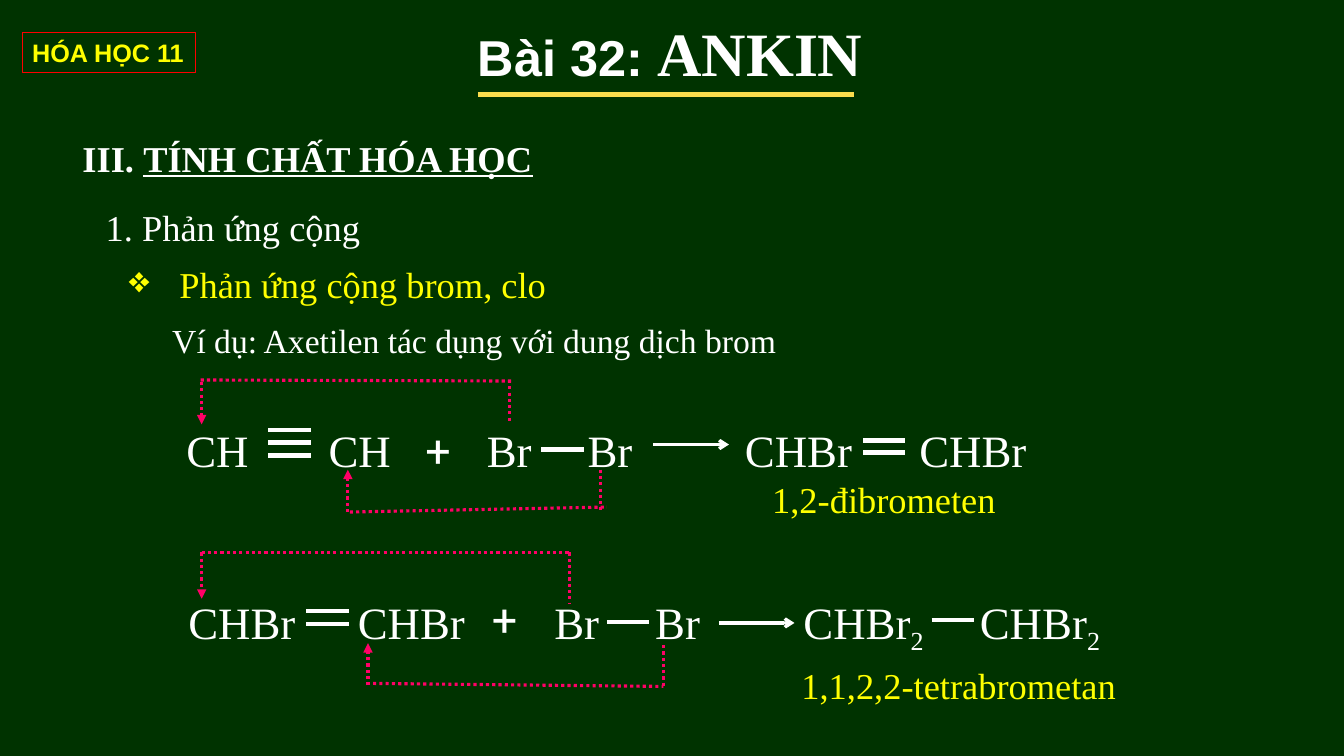
import pptx
import pptx.dml.color
import pptx.enum.dml
import pptx.enum.shapes
import pptx.enum.text
import pptx.oxml.ns
import pptx.util
from lxml import etree

Inches = pptx.util.Inches
qn = pptx.oxml.ns.qn

THEME = {
    "board": "003300", "white": "FFFFFF", "yellow": "FFFF00", "gold": "FADD4D",
    "red": "FF0000", "pink": "FF0066",
    "sans": "Arial", "serif": "Times New Roman", "plus": "Roboto",
    "badge": 18, "lesson": 36, "topic": 44, "heading": 26, "example": 24, "formula": 32,
}


def colour(name):
    return pptx.dml.color.RGBColor.from_string(THEME[name])


def write(box, spans, wrap=False, top_inset=0.05):
    """Fill a box with spans of (text, size, font, colour, extra formats)."""
    frame = box.text_frame
    frame.word_wrap = wrap
    sizes = pptx.enum.text.MSO_AUTO_SIZE
    frame.auto_size = sizes.NONE if wrap else sizes.SHAPE_TO_FIT_TEXT
    frame.vertical_anchor = pptx.enum.text.MSO_ANCHOR.TOP
    frame.margin_top = Inches(top_inset)
    para = frame.paragraphs[0]
    para.alignment = pptx.enum.text.PP_ALIGN.LEFT
    for text, size, font, ink, formats in spans:
        span = para.add_run()
        span.text = text
        span.font.color.rgb = colour(ink)
        values = {"size": pptx.util.Pt(THEME[size]), "name": THEME[font], **formats}
        for name, value in values.items():
            setattr(span.font, name, value)
    return para


def draw_line(start, end, ink, width, dotted=False, arrow=None):
    points = [Inches(value) for value in (*start, *end)]
    line = page.shapes.add_connector(pptx.enum.shapes.MSO_CONNECTOR.STRAIGHT, *points)
    line.line.color.rgb = colour(ink)
    line.line.width = pptx.util.Pt(width)
    if dotted:
        line.line.dash_style = pptx.enum.dml.MSO_LINE.ROUND_DOT
    properties = line._element.spPr
    if arrow:
        etree.SubElement(properties.find(qn("a:ln")), qn("a:tailEnd"), type=arrow)
    etree.SubElement(properties, qn("a:effectLst"))


deck = pptx.Presentation()
deck.slide_width, deck.slide_height = Inches(13.33), Inches(7.5)
page = deck.slides.add_slide(deck.slide_layouts[6])
page.background.fill.solid()
page.background.fill.fore_color.rgb = colour("board")

# Subject badge
badge = page.shapes.add_shape(pptx.enum.shapes.MSO_SHAPE.RECTANGLE,
                              Inches(0.22), Inches(0.32), Inches(1.72), Inches(0.4))
badge.shadow.inherit = False
badge.fill.background()
badge.line.color.rgb = colour("red")
badge.line.width = pptx.util.Pt(0.75)
write(badge, [("HÓA HỌC 11", "badge", "sans", "yellow", {"bold": True})])

# Title, headings and example
bold = {"bold": True}
headings = [
    ((4.64, 0.1, 4.05, 0.84), [("Bài 32: ", "lesson", "sans", "white", bold),
                               ("ANKIN", "topic", "serif", "white", bold)]),
    ((0.72, 1.3, 4.7, 0.54), [("III. ", "heading", "serif", "white", bold),
                              ("TÍNH CHẤT HÓA HỌC", "heading", "serif", "white",
                               {"bold": True, "underline": True})]),
    ((0.95, 1.99, 2.75, 0.54), [("1. Phản ứng cộng", "heading", "serif", "white", {})]),
    ((1.61, 3.12, 6.25, 0.5), [("Ví dụ: Axetilen tác dụng với dung dịch brom",
                                "example", "serif", "white", {})]),
]
for place, spans in headings:
    write(page.shapes.add_textbox(*map(Inches, place)), spans)
draw_line((4.74, 0.94), (8.47, 0.94), "gold", 3.5)

# Bulleted reaction type
reaction = page.shapes.add_textbox(Inches(1.18), Inches(2.55), Inches(4.52), Inches(0.54))
para = write(reaction, [("Phản ứng cộng brom, clo", "heading", "serif", "yellow", {})])
layout = para._p.get_or_add_pPr()
layout.set("marL", str(Inches(0.5)))
layout.set("indent", str(-Inches(0.5)))
etree.SubElement(layout, qn("a:buChar"), char="❖")

# Formulas: left, top, width, pieces, tab stop; a piece "2" is a subscript
formulas = [
    (1.75, 4.1, 0.92, ["CH"], None),
    (3.16, 4.1, 0.92, ["CH"], None),
    (4.12, 4.1, 0.5, ["+"], None),
    (4.73, 4.1, 1.69, ["Br\tBr"], 1.0),
    (7.29, 4.1, 3.33, ["CHBr\tCHBr"], 1.73),
    (1.77, 5.81, 1.5, ["CHBr"], None),
    (3.45, 5.81, 1.58, ["CHBr"], None),
    (4.78, 5.78, 0.5, ["+"], None),
    (5.4, 5.81, 1.76, ["Br\tBr"], 1.0),
    (7.87, 5.81, 3.58, ["CHBr", "2", "\tCHBr", "2"], 1.75),
]
for left, top, width, pieces, stop in formulas:
    box = page.shapes.add_textbox(Inches(left), Inches(top), Inches(width), Inches(0.67))
    spans = [(piece, "formula", "plus" if piece == "+" else "serif", "white", {})
             for piece in pieces]
    para = write(box, spans, wrap=True, top_inset=0.09)
    for span in para.runs:
        if span.text == "2":
            span._r.get_or_add_rPr().set("baseline", "-25000")
    if stop:
        tabs = etree.SubElement(para._p.get_or_add_pPr(), qn("a:tabLst"))
        etree.SubElement(tabs, qn("a:tab"), pos=str(Inches(stop)), algn="l")

# Product names
for left, top, width, product in [(7.56, 4.64, 2.42, "1,2-đibrometen"),
                                  (7.85, 6.49, 3.43, "1,1,2,2-tetrabrometan")]:
    box = page.shapes.add_textbox(Inches(left), Inches(top), Inches(width), Inches(0.58))
    write(box, [(product, "heading", "serif", "yellow", {})], wrap=True, top_inset=0.09)

# Chemical bonds: left end and the height of each stroke
bonds = [
    (2.66, [4.27, 4.39, 4.52]), (5.37, [4.46]), (8.56, [4.37, 4.49]),
    (3.04, [6.06, 6.19]), (6.02, [6.17]), (9.24, [6.15]),
]
for left, heights in bonds:
    for height in heights:
        draw_line((left, height), (left + 0.42, height), "white", 3)

# Reaction arrows
for left, height in [(6.48, 4.41), (7.13, 6.18)]:
    draw_line((left, height), (left + 0.75, height), "white", 2.25, arrow="arrow")

# Dotted paths of the bromine atoms: stem, crossing, arrow
atom_paths = [
    [((5.05, 3.77), (5.05, 4.19)), ((1.99, 3.77), (5.08, 3.78)), ((2, 3.79), (2, 4.21))],
    [((5.96, 4.66), (5.96, 5.08)), ((3.47, 5.08), (6.02, 5.03)), ((3.45, 5.08), (3.45, 4.66))],
    [((5.65, 5.48), (5.65, 5.98)), ((2, 5.48), (5.66, 5.48)), ((2, 5.48), (2, 5.94))],
    [((6.58, 6.4), (6.58, 6.81)), ((3.7, 6.78), (6.58, 6.81)), ((3.65, 6.8), (3.65, 6.38))],
]
for strokes in atom_paths:
    for (start, end), arrow in zip(strokes, [None, None, "triangle"]):
        draw_line(start, end, "pink", 2.25, dotted=True, arrow=arrow)

deck.save("out.pptx")
